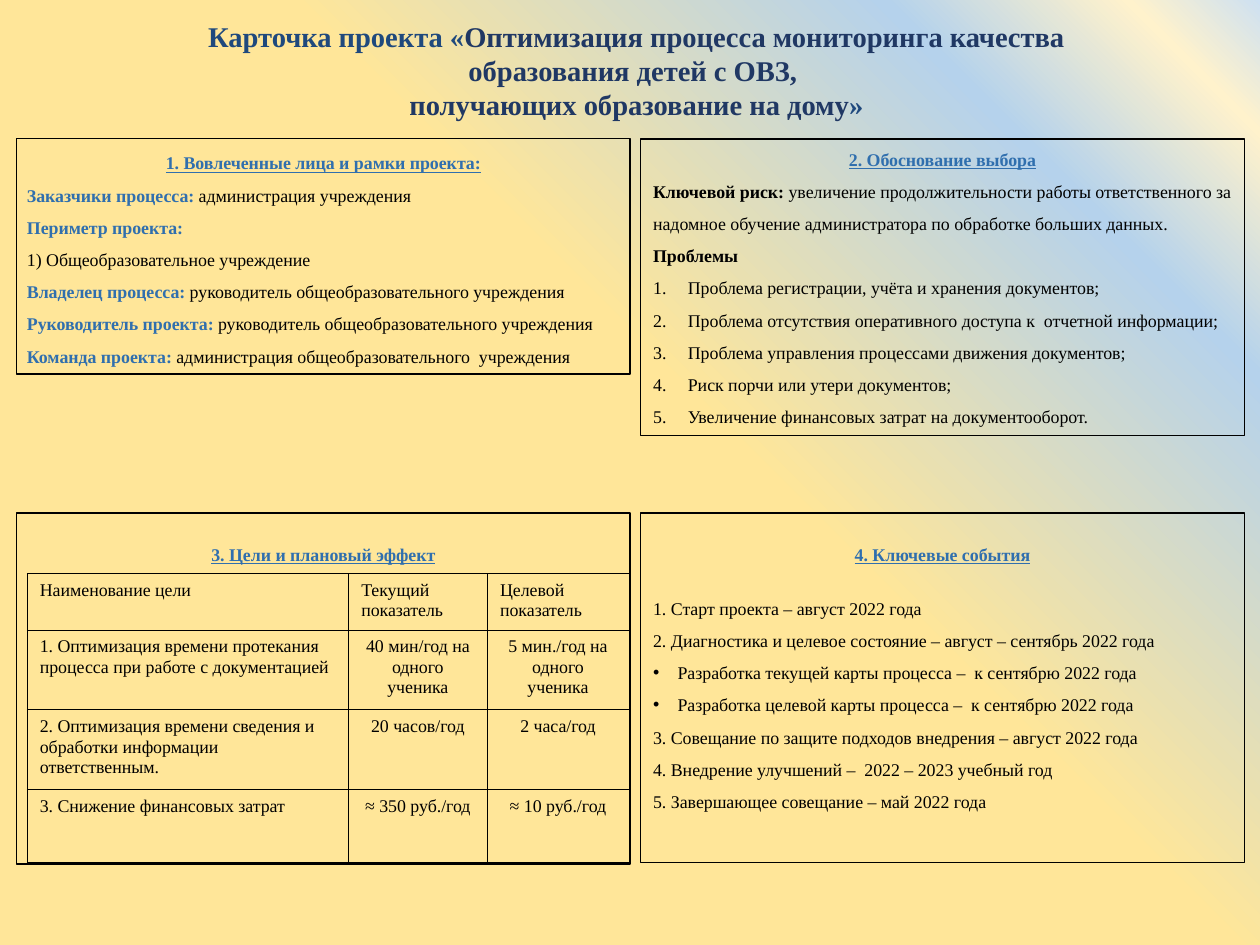
import pptx
import pptx.util
import pptx.dml.color
import pptx.enum.shapes
import pptx.enum.text
import pptx.oxml.ns
import lxml.etree

Inches = pptx.util.Inches
Pt = pptx.util.Pt
qn = pptx.oxml.ns.qn
Align = pptx.enum.text.PP_ALIGN
Anchor = pptx.enum.text.MSO_ANCHOR

FONT = "Times New Roman"
COLORS = {
    "title": "1F497D",
    "title_dark": "203864",
    "heading": "306FAE",
    "text": "000000",
}
BACKGROUND = [(0, "FFE699"), (56, "FFE699"), (83, "B5D2EC"), (94, "FFF2CC"), (100, "CEE1F2")]
LEFT, RIGHT = 0.13, 4.98
LEFT_WIDTH, RIGHT_WIDTH = 4.77, 4.7
TOP, BOTTOM = 1.08, 3.99

PARTICIPANTS = [
    ("Заказчики процесса:", " администрация учреждения"),
    ("Периметр проекта:", ""),
    ("", "1) Общеобразовательное учреждение"),
    ("Владелец процесса:", " руководитель общеобразовательного учреждения"),
    ("Руководитель проекта:", " руководитель общеобразовательного учреждения"),
    ("Команда проекта:", " администрация общеобразовательного  учреждения"),
]
RISK = ("Ключевой риск:", " увеличение продолжительности работы ответственного за "
        "надомное обучение администратора по обработке больших данных.")
PROBLEMS = [
    "Проблема регистрации, учёта и хранения документов;",
    "Проблема отсутствия оперативного доступа к  отчетной информации;",
    "Проблема управления процессами движения документов;",
    "Риск порчи или утери документов;",
    "Увеличение финансовых затрат на документооборот.",
]
EVENTS = [
    ("1. Старт проекта – август 2022 года", False),
    ("2. Диагностика и целевое состояние – август – сентябрь 2022 года", False),
    ("Разработка текущей карты процесса –  к сентябрю 2022 года", True),
    ("Разработка целевой карты процесса –  к сентябрю 2022 года", True),
    ("3. Совещание по защите подходов внедрения – август 2022 года", False),
    ("4. Внедрение улучшений –  2022 – 2023 учебный год", False),
    ("5. Завершающее совещание – май 2022 года", False),
]
GOALS = [
    ("Наименование цели", "Текущий показатель", "Целевой показатель"),
    ("1. Оптимизация времени протекания процесса при работе с документацией",
     "40 мин/год на одного ученика", "5 мин./год на одного ученика"),
    ("2. Оптимизация времени сведения и обработки информации ответственным.",
     "20 часов/год", "2 часа/год"),
    ("3. Снижение финансовых затрат", "≈ 350 руб./год", "≈ 10 руб./год"),
]


def add_span(para, text, color="text", size=10, bold=False, underline=False):
    span = para.add_run()
    span.text = text
    font = span.font
    font.name, font.size, font.bold, font.underline = FONT, Pt(size), bold, underline
    font.color.rgb = pptx.dml.color.RGBColor.from_string(COLORS[color])


def set_bullet(para, tag="a:buNone", indent=0, **attributes):
    properties = para._p.get_or_add_pPr()
    properties.set("marL", str(Inches(indent)))
    properties.set("indent", str(-Inches(indent)))
    bullet = lxml.etree.SubElement(properties, qn(tag))
    for name, value in attributes.items():
        bullet.set(name, value)


def format_para(para, align=Align.LEFT, spacing=1.0, before=0):
    para.alignment = align
    para.line_spacing = spacing
    para.space_before = Pt(before)
    para.space_after = Pt(0)


def set_frame(frame, insets, anchor=Anchor.TOP):
    frame.word_wrap = True
    frame.auto_size = pptx.enum.text.MSO_AUTO_SIZE.NONE
    frame.vertical_anchor = anchor
    frame.margin_left = frame.margin_right = Inches(insets[0])
    frame.margin_top, frame.margin_bottom = Inches(insets[1]), Inches(insets[2])


def place(shape, box):
    shape.left, shape.top, shape.width, shape.height = map(Inches, box)


def add_panel_shape(page):
    shape = page.shapes.add_shape(pptx.enum.shapes.MSO_SHAPE.RECTANGLE, 0, 0, 0, 0)
    shape.shadow.inherit = False
    return shape


def build_panel(shape, box, heading, insets=(0.1, 0.05, 0.05), spacing=1.0):
    place(shape, box)
    shape.fill.background()
    shape.line.color.rgb = pptx.dml.color.RGBColor.from_string(COLORS["text"])
    shape.line.width = Pt(0.75)
    frame = shape.text_frame
    set_frame(frame, insets)
    para = frame.paragraphs[0]
    format_para(para, Align.CENTER, spacing)
    set_bullet(para)
    add_span(para, heading, "heading", bold=True, underline=True)
    return frame


def add_labelled(frame, label, text, color):
    para = frame.add_paragraph()
    format_para(para, spacing=1.5)
    set_bullet(para)
    if label:
        add_span(para, label, color, bold=True)
    if text:
        add_span(para, text)


def build_background(page):
    fill = page.background.fill
    fill.gradient()
    fill.gradient_angle = 45
    stops = page.element.find(".//" + qn("a:gsLst"))
    for stop in list(stops):
        stops.remove(stop)
    for percent, color in BACKGROUND:
        stop = lxml.etree.SubElement(stops, qn("a:gs"), pos=str(percent * 1000))
        lxml.etree.SubElement(stop, qn("a:srgbClr"), val=color)


def build_title(shape, box):
    place(shape, box)
    frame = shape.text_frame
    set_frame(frame, (0, 0, 0), Anchor.MIDDLE)
    lines = [
        [("Карточка проекта «", "title"),
         ("Оптимизация процесса мониторинга качества образования детей с ОВЗ, ", "title_dark")],
        [("получающих образование на дому", "title_dark"), ("»", "title")],
    ]
    for index, line in enumerate(lines):
        para = frame.add_paragraph() if index else frame.paragraphs[0]
        format_para(para, Align.CENTER)
        for text, color in line:
            add_span(para, text, color, size=16, bold=True)


def build_participants(shape, box):
    frame = build_panel(shape, box, "1. Вовлеченные лица и рамки проекта:", (0.08, 0.02, 0.04), 1.5)
    for label, text in PARTICIPANTS:
        add_labelled(frame, label, text, "heading")


def build_reasons(shape, box):
    frame = build_panel(shape, box, "2. Обоснование выбора", spacing=1.14)
    for label, text in (RISK, ("Проблемы", "")):
        add_labelled(frame, label, text, "text")
    for problem in PROBLEMS:
        para = frame.add_paragraph()
        format_para(para, Align.JUSTIFY, 1.5)
        set_bullet(para, "a:buAutoNum", 0.27, type="arabicPeriod")
        add_span(para, problem)


def build_events(shape, box):
    frame = build_panel(shape, box, "4. Ключевые события", (0.1, 0.24, 0.05))
    for index, (event, bulleted) in enumerate(EVENTS):
        para = frame.add_paragraph()
        format_para(para, before=6 if index else 18)
        if bulleted:
            set_bullet(para, "a:buChar", 0.19, char="•")
        else:
            set_bullet(para)
        add_span(para, event)


def set_borders(cell):
    properties = cell._tc.get_or_add_tcPr()
    for index, side in enumerate(("a:lnL", "a:lnR", "a:lnT", "a:lnB")):
        line = lxml.etree.Element(qn(side), w=str(Pt(0.23)))
        fill = lxml.etree.SubElement(line, qn("a:solidFill"))
        lxml.etree.SubElement(fill, qn("a:srgbClr"), val=COLORS["text"])
        properties.insert(index, line)


def build_goals(page, box):
    build_panel(add_panel_shape(page), box, "3. Цели и плановый эффект", (0.1, 0.24, 0.05))
    left, top = box[0] + 0.08, box[1] + 0.47
    table = page.shapes.add_table(len(GOALS), 3, Inches(left), Inches(top),
                                  Inches(4.68), Inches(2.25)).table
    table.first_row = table.horz_banding = False
    for column, width in zip(table.columns, (2.5, 1.08, 1.1)):
        column.width = Inches(width)
    for row, height in zip(table.rows, (0.44, 0.62, 0.62, 0.57)):
        row.height = Inches(height)
    for row, texts in enumerate(GOALS):
        for column, text in enumerate(texts):
            cell = table.cell(row, column)
            cell.fill.background()
            set_borders(cell)
            para = cell.text_frame.paragraphs[0]
            format_para(para, Align.CENTER if row and column else Align.LEFT, 1.04)
            add_span(para, text)


def main():
    deck = pptx.Presentation()
    deck.slide_width, deck.slide_height = Inches(9.8), Inches(7.35)
    page = deck.slides.add_slide(deck.slide_layouts[3])
    build_background(page)
    build_title(page.shapes.title, (1.18, 0.14, 7.54, 0.81))
    build_goals(page, (LEFT, BOTTOM, LEFT_WIDTH, 2.73))
    build_events(page.placeholders[2], (RIGHT, BOTTOM, RIGHT_WIDTH, 2.72))
    build_participants(add_panel_shape(page), (LEFT, TOP, LEFT_WIDTH, 1.83))
    build_reasons(page.placeholders[1], (RIGHT, TOP, RIGHT_WIDTH, 2.31))
    deck.save("out.pptx")


if __name__ == "__main__":
    main()
